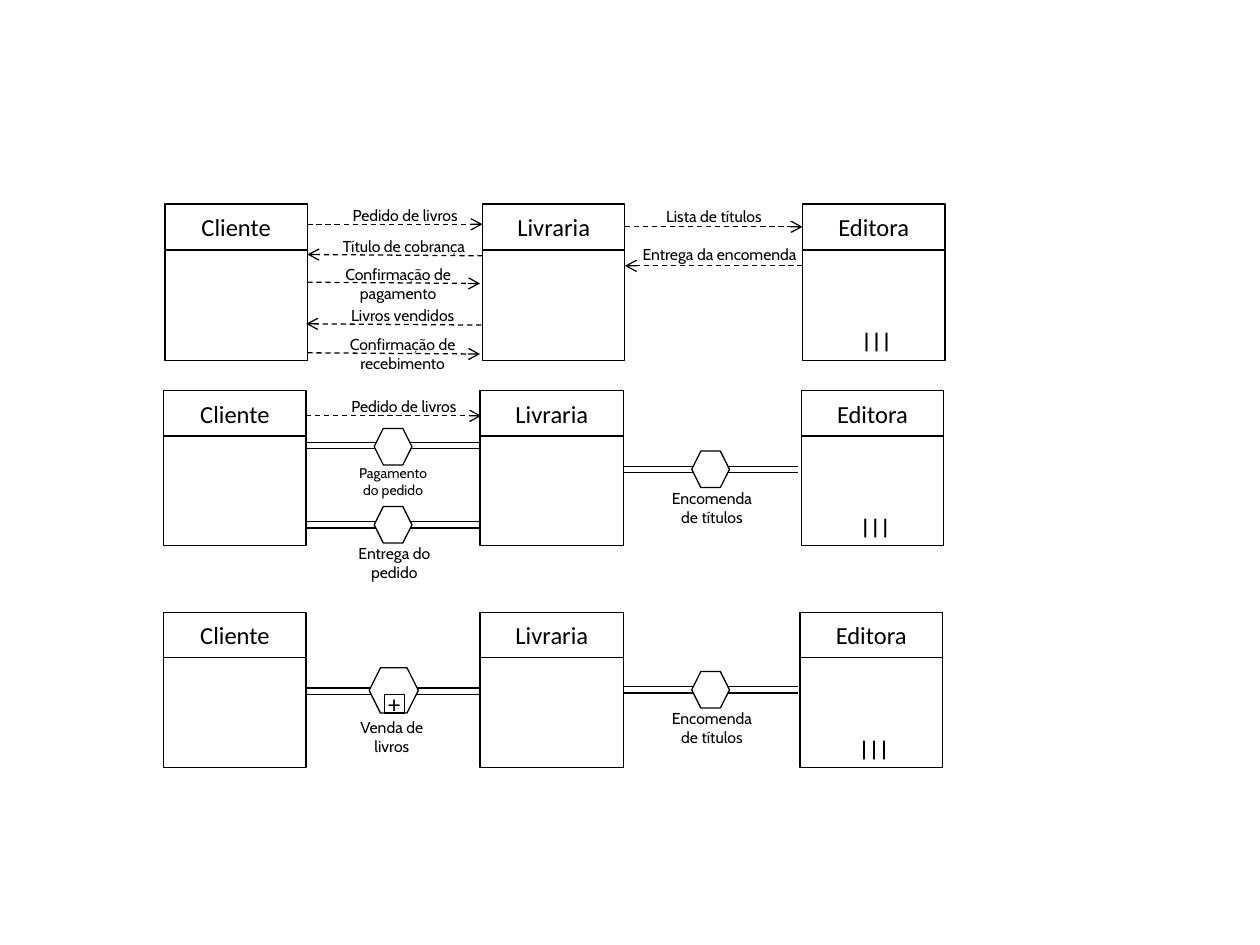
from lxml.etree import SubElement
from pptx import Presentation
from pptx.dml.color import RGBColor
from pptx.enum.dml import MSO_LINE
from pptx.enum.shapes import MSO_CONNECTOR, MSO_SHAPE
from pptx.enum.text import MSO_ANCHOR, MSO_AUTO_SIZE, PP_ALIGN
from pptx.oxml.ns import qn
from pptx.util import Pt

PX = 9144
BLACK, WHITE = "000000", "FFFFFF"
HEADER_HEIGHT, BODY_HEIGHT, POOL_WIDTH = 36, 87, 113
LABEL = {"name": "Cabin", "size": Pt(9)}
NAME = {"name": "Calibri", "size": Pt(14)}
MARKER = {"name": "Calibri", "size": Pt(12), "bold": True}
NO_MARGINS = {"margin_left": 0, "margin_right": 0, "margin_top": 0, "margin_bottom": 0}


def px(*lengths):
    return [round(length * PX) for length in lengths]


def color(hex_string):
    return RGBColor.from_string(hex_string)


def set_values(target, values):
    for attribute, value in values.items():
        setattr(target, attribute, value)


def write(frame, wording, font, align=PP_ALIGN.CENTER):
    paragraph = frame.paragraphs[0]
    paragraph.alignment = align
    run = paragraph.add_run()
    run.text = wording
    set_values(run.font, font)
    run.font.color.rgb = color(BLACK)


def add_outlined(slide, preset, box):
    outlined = slide.shapes.add_shape(preset, *px(*box))
    outlined.shadow.inherit = False
    outlined.fill.solid()
    outlined.fill.fore_color.rgb = color(WHITE)
    outlined.line.color.rgb = color(BLACK)
    outlined.line.width = Pt(0.75)
    return outlined


def add_label(slide, box, wording, font, align=PP_ALIGN.CENTER, wrap=True):
    frame = slide.shapes.add_textbox(*px(*box)).text_frame
    set_values(frame, {"word_wrap": wrap, "auto_size": MSO_AUTO_SIZE.SHAPE_TO_FIT_TEXT})
    write(frame, wording, font, align)


def add_line(slide, ends):
    line = slide.shapes.add_connector(MSO_CONNECTOR.STRAIGHT, *px(*ends))
    line.line.color.rgb = color(BLACK)
    line.line.width = Pt(0.75)
    SubElement(line._element.spPr, qn("a:effectLst"))
    return line


def add_pool(slide, box, participant, multiple=False):
    left, top, width, height = box
    header = add_outlined(slide, MSO_SHAPE.RECTANGLE, (left, top, width, HEADER_HEIGHT))
    header.text_frame.vertical_anchor = MSO_ANCHOR.MIDDLE
    write(header.text_frame, participant, NAME)
    body_top = top + height - BODY_HEIGHT
    add_outlined(slide, MSO_SHAPE.RECTANGLE, (left, body_top, width, BODY_HEIGHT))
    if multiple:
        add_label(slide, (left + 37, top + 93, 44, 30), "|||", MARKER, PP_ALIGN.LEFT, False)
    return header


def add_message(slide, origin, wording, label_box, ends):
    left, top = origin
    x1, y1, x2, y2 = ends
    arrow = add_line(slide, (left + x1, top + y1, left + x2, top + y2))
    arrow.line.dash_style = MSO_LINE.DASH
    SubElement(arrow.line._get_or_add_ln(), qn("a:tailEnd"), type="arrow")
    x, y, width, height = label_box
    add_label(slide, (left + x, top + y, width, height), wording, LABEL)
    return arrow


def add_conversation(slide, box, wording, hexagon_box=(54, -12, 30, 29),
                     label_box=(27, 13, 86, 40), size=9):
    left, top, width, gap = box
    for y in (top, top + gap):
        add_line(slide, (left, y, left + width, y))
    x, y, hexagon_width, hexagon_height = hexagon_box
    add_outlined(slide, MSO_SHAPE.HEXAGON, (left + x, top + y, hexagon_width, hexagon_height))
    x, y, label_width, label_height = label_box
    add_label(slide, (left + x, top + y, label_width, label_height), wording,
              {**LABEL, "size": Pt(size)})


def add_subprocess_sign(slide, box):
    sign = add_outlined(slide, MSO_SHAPE.RECTANGLE, box)
    set_values(sign.text_frame, {**NO_MARGINS, "vertical_anchor": MSO_ANCHOR.MIDDLE})
    write(sign.text_frame, "+", NAME)


def add_message_row(slide, box):
    left, top, width, height = box
    add_pool(slide, (left, top, POOL_WIDTH, height), "Cliente")
    bookshop = add_pool(slide, (left + 252, top, POOL_WIDTH, height), "Livraria")
    publisher = add_pool(slide, (left + width - POOL_WIDTH, top, POOL_WIDTH, height), "Editora", True)
    for wording, label_box, ends in (
        ("Pedido de livros", (7, -4, 141, 25), (0, 16, 139, 16)),
        ("Título de cobrança", (6, 21, 141, 25), (139, 41, 0, 40)),
        ("Confirmação de pagamento", (7, 43, 130, 40), (0, 62, 137, 63)),
        ("Livros vendidos", (5, 76, 141, 25), (138, 96, -1, 95)),
        ("Confirmação de recebimento", (5, 99, 141, 40), (0, 118, 137, 119)),
    ):
        add_message(slide, (left + POOL_WIDTH, top), wording, label_box, ends)
    supply = (left + 365, top)
    titles = add_message(slide, supply, "Lista de títulos", (0, -3, 141, 25), (0, 19, 141, 19))
    titles.begin_connect(bookshop, 3)
    titles.end_connect(publisher, 1)
    add_message(slide, supply, "Entrega da encomenda", (-2, 27, 154, 25), (141, 49, 0, 49))


def add_conversation_pools(slide, box):
    left, top, width, height = box
    add_pool(slide, (left, top, POOL_WIDTH, height), "Cliente")
    add_pool(slide, (left + 251, top, POOL_WIDTH + 1, height), "Livraria")
    add_pool(slide, (left + width - POOL_WIDTH, top, POOL_WIDTH, height), "Editora", True)


def add_detailed_row(slide, box):
    left, top = box[:2]
    add_conversation_pools(slide, box)
    order_left = left + POOL_WIDTH
    add_message(slide, (order_left, top), "Pedido de livros", (7, 0, 141, 25), (0, 20, 139, 20))
    add_conversation(slide, (order_left, top + 41, 138, 5), "Pagamento do pedido",
                     hexagon_box=(54, -11, 30, 29), label_box=(26, 13, 86, 37), size=8)
    add_conversation(slide, (order_left, top + 104, 138, 5), "Entrega do pedido")
    add_conversation(slide, (left + 365, top + 60, 138, 5), "Encomenda de títulos")


def add_summary_row(slide, box):
    left, top = box[:2]
    add_conversation_pools(slide, box)
    add_conversation(slide, (left + POOL_WIDTH, top + 60, 139, 5), "Venda de livros",
                     hexagon_box=(50, -16, 39, 36), label_box=(25, 19, 86, 40))
    add_subprocess_sign(slide, (left + 175, top + 65, 16, 15))
    add_conversation(slide, (left + 365, top + 59, 138, 5), "Encomenda de títulos")


def main():
    presentation = Presentation()
    presentation.slide_width, presentation.slide_height = px(1000, 750)
    slide = presentation.slides.add_slide(presentation.slide_layouts[6])
    add_message_row(slide, (131, 162, 619, 124))
    add_detailed_row(slide, (130, 310, 619, 123))
    add_summary_row(slide, (130, 486, 618, 123))
    presentation.save("out.pptx")


if __name__ == "__main__":
    main()
